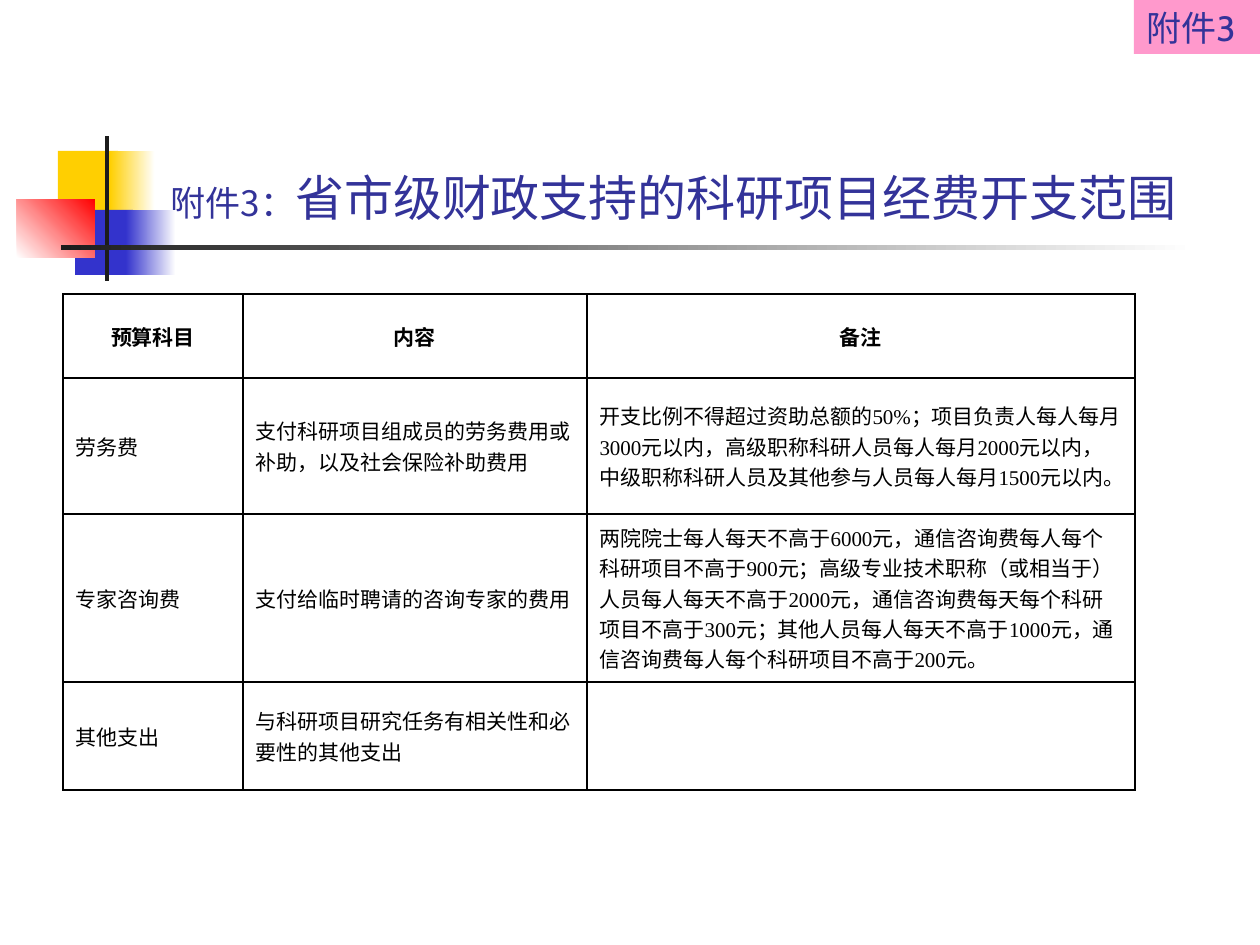
from typing import NamedTuple, Optional

from lxml.etree import SubElement
from pptx import Presentation
from pptx.dml.color import RGBColor
from pptx.enum.shapes import MSO_SHAPE
from pptx.enum.text import MSO_ANCHOR, MSO_AUTO_SIZE, PP_ALIGN
from pptx.oxml.ns import qn
from pptx.util import Emu, Pt

PX_PER_INCH = 126
BLACK = RGBColor(0x00, 0x00, 0x00)
WHITE = RGBColor(0xFF, 0xFF, 0xFF)
YELLOW = RGBColor(0xFF, 0xCF, 0x01)
BLUE = RGBColor(0x33, 0x33, 0xCC)
RED = RGBColor(0xFF, 0x00, 0x00)
CHARCOAL = RGBColor(0x1C, 0x1C, 0x1C)
PINK = RGBColor(0xFF, 0x99, 0xCC)
NAVY = RGBColor(0x33, 0x33, 0x99)
CHINESE_FONT = "Noto Sans CJK SC"
LABEL_FONT = "Cabin"
TABLE_FONT = "Times New Roman"


class Block(NamedTuple):
    left: int
    top: int
    width: int
    height: int
    color: RGBColor
    fade_to: Optional[RGBColor] = None
    angle: int = 0


BLOCKS = [
    Block(58, 151, 60, 66, YELLOW),
    Block(110, 151, 45, 66, YELLOW, WHITE),
    Block(75, 210, 58, 65, BLUE),
    Block(126, 210, 50, 65, BLUE, WHITE),
    Block(17, 199, 78, 59, WHITE, RED, 45),
    Block(105, 136, 4, 145, CHARCOAL),
    Block(61, 245, 1134, 5, CHARCOAL, WHITE),
]
LABEL = Block(1134, 0, 126, 54, PINK)
COLUMN_WIDTHS = [180, 344, 548]
ROW_HEIGHTS = [84, 136, 168, 108]
ROWS = [
    ["预算科目", "内容", "备注"],
    [
        "劳务费",
        "支付科研项目组成员的劳务费用或补助，以及社会保险补助费用",
        "开支比例不得超过资助总额的50%；项目负责人每人每月3000元以内，"
        "高级职称科研人员每人每月2000元以内，"
        "中级职称科研人员及其他参与人员每人每月1500元以内。",
    ],
    [
        "专家咨询费",
        "支付给临时聘请的咨询专家的费用",
        "两院院士每人每天不高于6000元，通信咨询费每人每个科研项目不高于900元；"
        "高级专业技术职称（或相当于）人员每人每天不高于2000元，"
        "通信咨询费每天每个科研项目不高于300元；"
        "其他人员每人每天不高于1000元，通信咨询费每人每个科研项目不高于200元。",
    ],
    ["其他支出", "与科研项目研究任务有相关性和必要性的其他支出", ""],
]


def px(length: int) -> Emu:
    """Turn pixels into EMU."""
    return Emu(round(length * 914400 / PX_PER_INCH))


def style_paragraph(para, size: int, font: str, color: RGBColor, bold: bool = False) -> None:
    """Set the Latin and East Asian fonts, size and colour of a paragraph."""
    para.font.size = Pt(size)
    para.font.bold = bold
    para.font.color.rgb = color
    para.font.name = font
    properties = para._p.get_or_add_pPr().find(qn("a:defRPr"))
    SubElement(properties, qn("a:ea"), typeface=CHINESE_FONT)


def draw_block(page, block: Block):
    """Draw a borderless rectangle with a plain or fading fill."""
    box = page.shapes.add_shape(
        MSO_SHAPE.RECTANGLE, px(block.left), px(block.top), px(block.width), px(block.height)
    )
    box.shadow.inherit = False
    box.line.fill.background()
    if block.fade_to is None:
        box.fill.solid()
        box.fill.fore_color.rgb = block.color
    else:
        box.fill.gradient()
        box.fill.gradient_angle = block.angle
        for stop, color in zip(box.fill.gradient_stops, (block.color, block.fade_to)):
            stop.color.rgb = color
    return box


def write_title(page) -> None:
    """Place and fill the title placeholder."""
    title = page.shapes.title
    title.left, title.top, title.width, title.height = px(158), px(32), px(1074), px(201)
    frame = title.text_frame
    frame.auto_size = MSO_AUTO_SIZE.NONE
    frame.vertical_anchor = MSO_ANCHOR.BOTTOM
    para = frame.paragraphs[0]
    para.alignment = PP_ALIGN.LEFT
    style_paragraph(para, 28, CHINESE_FONT, NAVY)
    for text, size in (("附件3：", 20), ("省市级财政支持的科研项目经费开支范围", 28)):
        span = para.add_run()
        span.text = text
        span.font.size = Pt(size)


def draw_label(page) -> None:
    """Draw the corner label."""
    frame = draw_block(page, LABEL).text_frame
    frame.word_wrap = False
    frame.vertical_anchor = MSO_ANCHOR.MIDDLE
    para = frame.paragraphs[0]
    para.text = "附件3"
    para.alignment = PP_ALIGN.LEFT
    style_paragraph(para, 20, LABEL_FONT, NAVY)


def draw_borders(cell) -> None:
    """Give a cell black lines on all four sides."""
    properties = cell._tc.get_or_add_tcPr()
    for side in ("a:lnL", "a:lnR", "a:lnT", "a:lnB"):
        line = SubElement(properties, qn(side), w=str(Pt(1)))
        fill = SubElement(line, qn("a:solidFill"))
        SubElement(fill, qn("a:srgbClr"), val=str(BLACK))


def draw_table(page) -> None:
    """Draw the table of budget items."""
    table = page.shapes.add_table(
        len(ROWS), len(COLUMN_WIDTHS), px(63), px(294), px(sum(COLUMN_WIDTHS)), px(sum(ROW_HEIGHTS))
    ).table
    table.horz_banding = False
    table.first_row = False
    for column, width in zip(table.columns, COLUMN_WIDTHS):
        column.width = px(width)
    for row_number, (row, height, texts) in enumerate(zip(table.rows, ROW_HEIGHTS, ROWS)):
        row.height = px(height)
        is_header = row_number == 0
        for cell, text in zip(row.cells, texts):
            draw_borders(cell)
            cell.fill.background()
            cell.vertical_anchor = MSO_ANCHOR.MIDDLE
            para = cell.text_frame.paragraphs[0]
            para.text = text
            para.alignment = PP_ALIGN.CENTER if is_header else PP_ALIGN.LEFT
            style_paragraph(para, 12, TABLE_FONT, BLACK, is_header)


def main() -> None:
    """Build the slide and save it."""
    deck = Presentation()
    deck.slide_width, deck.slide_height = px(1260), px(945)
    page = deck.slides.add_slide(deck.slide_layouts[5])
    for block in BLOCKS:
        draw_block(page, block)
    write_title(page)
    draw_label(page)
    draw_table(page)
    deck.save("out.pptx")


if __name__ == "__main__":
    main()
